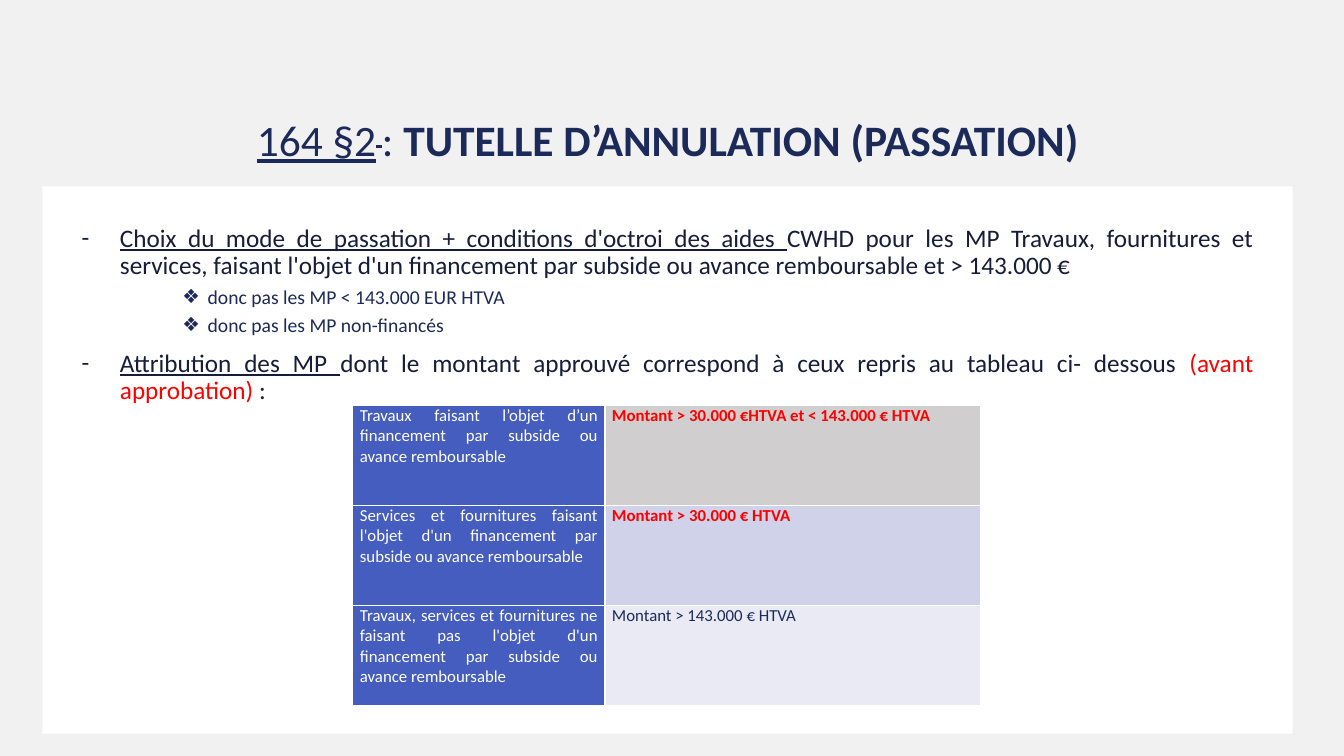
"""Builds the slide on the annulment supervision of public contract procedures."""
import pptx
import pptx.util
import pptx.dml.color
import pptx.enum.shapes
import pptx.enum.text
import pptx.oxml.ns
import lxml.etree

Inches, Pt = pptx.util.Inches, pptx.util.Pt
ALIGN = pptx.enum.text.PP_ALIGN
ANCHOR = pptx.enum.text.MSO_ANCHOR
COLORS = {
    "back": "F1F1F1", "white": "FFFFFF", "title": "1C2A5A", "body": "161D3A",
    "navy": "1C2A59", "red": "FF0000", "blue": "455DBE",
    "grey": "D0CECE", "lilac": "CFD2E8", "pale": "E9EAF4",
}


class SlideBuilder:
    """Holds the style and the current slide."""

    def __init__(self, prs, font="Calibri"):
        self.font = font
        self.slide = prs.slides.add_slide(prs.slide_layouts[6])
        self.fill(self.slide.background, "back")

    def rgb(self, color):
        return pptx.dml.color.RGBColor.from_string(COLORS[color])

    def fill(self, target, color):
        target.fill.solid()
        target.fill.fore_color.rgb = self.rgb(color)

    def child(self, parent, tag, **attrs):
        return lxml.etree.SubElement(parent, pptx.oxml.ns.qn(tag), **attrs)

    def frame(self, sp, insets, anchor):
        tf = sp.text_frame
        tf.word_wrap = True
        tf.vertical_anchor = anchor
        tf.margin_left, tf.margin_top, tf.margin_right, tf.margin_bottom = map(Inches, insets)
        return tf

    def run(self, p, text, size, color, bold=False, underline=False, raised=False):
        r = p.add_run()
        r.text = text
        r.font.name = self.font
        r.font.size = Pt(size)
        r.font.color.rgb = self.rgb(color)
        r.font.bold = bold
        r.font.underline = underline
        if raised:
            r.font._element.set("baseline", "30000")

    def title(self, box, runs):
        sp = self.slide.shapes.add_textbox(*map(Inches, box))
        p = self.frame(sp, (0, 0.05, 0.1, 0.2), ANCHOR.BOTTOM).paragraphs[0]
        p.alignment = ALIGN.CENTER
        p.line_spacing = 0.9
        for text, style in runs:
            self.run(p, text, 31, "title", **style)

    def panel(self, box):
        sp = self.slide.shapes.add_shape(pptx.enum.shapes.MSO_SHAPE.RECTANGLE, *map(Inches, box))
        sp.shadow.inherit = False
        self.fill(sp, "white")
        sp.line.fill.background()
        return self.frame(sp, (0.39,) * 4, ANCHOR.TOP)

    def bullet(self, tf, mark, indent, hanging, size, before, runs):
        first = not tf.paragraphs[0].runs
        p = tf.paragraphs[0] if first else tf.add_paragraph()
        pPr = p._p.get_or_add_pPr()
        pPr.set("marL", str(Inches(indent)))
        pPr.set("indent", str(-Inches(hanging)))
        self.child(pPr, "a:buFont", typeface=self.font)
        self.child(pPr, "a:buChar", char=mark)
        p.alignment = ALIGN.JUSTIFY
        p.line_spacing = 0.9
        p.space_before = Pt(0 if first else before)
        for text, color, underline in runs:
            self.run(p, text, size, color, underline=underline)

    def cell(self, cell, text, fill, color, bold):
        tcPr = cell._tc.get_or_add_tcPr()
        for side in ("a:lnL", "a:lnR", "a:lnT", "a:lnB"):
            ln = self.child(tcPr, side, w=str(Pt(1)))
            self.child(self.child(ln, "a:solidFill"), "a:srgbClr", val=COLORS["white"])
        self.fill(cell, fill)
        cell.margin_left = cell.margin_right = Inches(0.07)
        cell.margin_top = cell.margin_bottom = 0
        p = cell.text_frame.paragraphs[0]
        p.alignment = ALIGN.JUSTIFY
        self.run(p, text, 12, color, bold)

    def table(self, box, widths, rows):
        table = self.slide.shapes.add_table(len(rows), len(widths), *map(Inches, box)).table
        for column, width in zip(table.columns, widths):
            column.width = Inches(width)
        for i, (label, amount, fill, color, bold) in enumerate(rows):
            self.cell(table.cell(i, 0), label, "blue", "white", False)
            self.cell(table.cell(i, 1), amount, fill, color, bold)


def main():
    prs = pptx.Presentation()
    prs.slide_width, prs.slide_height = Inches(13.33), Inches(7.5)
    s = SlideBuilder(prs)

    s.title((0.92, 0.92, 11.5, 0.93), [
        ("164 §2", {"underline": True}),
        (" ", {"underline": True, "raised": True}),
        (": ", {}),
        ("TUTELLE D’ANNULATION (PASSATION)", {"bold": True}),
    ])

    tf = s.panel((0.42, 1.85, 12.4, 5.43))
    dash = ("-", 0.38, 0.38, 18, 10)
    diamond = ("❖", 1.25, 0.25, 14, 5)
    s.bullet(tf, *dash, [
        ("Choix du mode de passation + conditions d'octroi des aides ", "body", True),
        ("CWHD pour les MP Travaux, fournitures et services, faisant l'objet d'un "
         "financement par subside ou avance remboursable et > 143.000 €", "body", False),
    ])
    for text in ("donc pas les MP < 143.000 EUR HTVA", "donc pas les MP non-financés"):
        s.bullet(tf, *diamond, [(text, "navy", False)])
    s.bullet(tf, *dash, [
        ("Attribution des MP ", "body", True),
        ("dont le montant approuvé correspond à ceux repris au tableau ci- dessous ", "body", False),
        ("(avant approbation)", "red", False),
        (" :", "body", False),
    ])

    s.table((3.5, 4.02, 6.23, 2.98), (2.5, 3.73), [
        ("Travaux faisant l’objet d’un financement par subside ou avance remboursable",
         "Montant > 30.000 €HTVA et < 143.000 € HTVA ", "grey", "red", True),
        ("Services et fournitures faisant l'objet d'un financement par subside ou avance remboursable",
         "Montant > 30.000 € HTVA", "lilac", "red", True),
        ("Travaux, services et fournitures ne faisant pas l'objet d'un financement par subside "
         "ou avance remboursable",
         "Montant > 143.000 € HTVA", "pale", "navy", False),
    ])
    prs.save("out.pptx")


if __name__ == "__main__":
    main()
